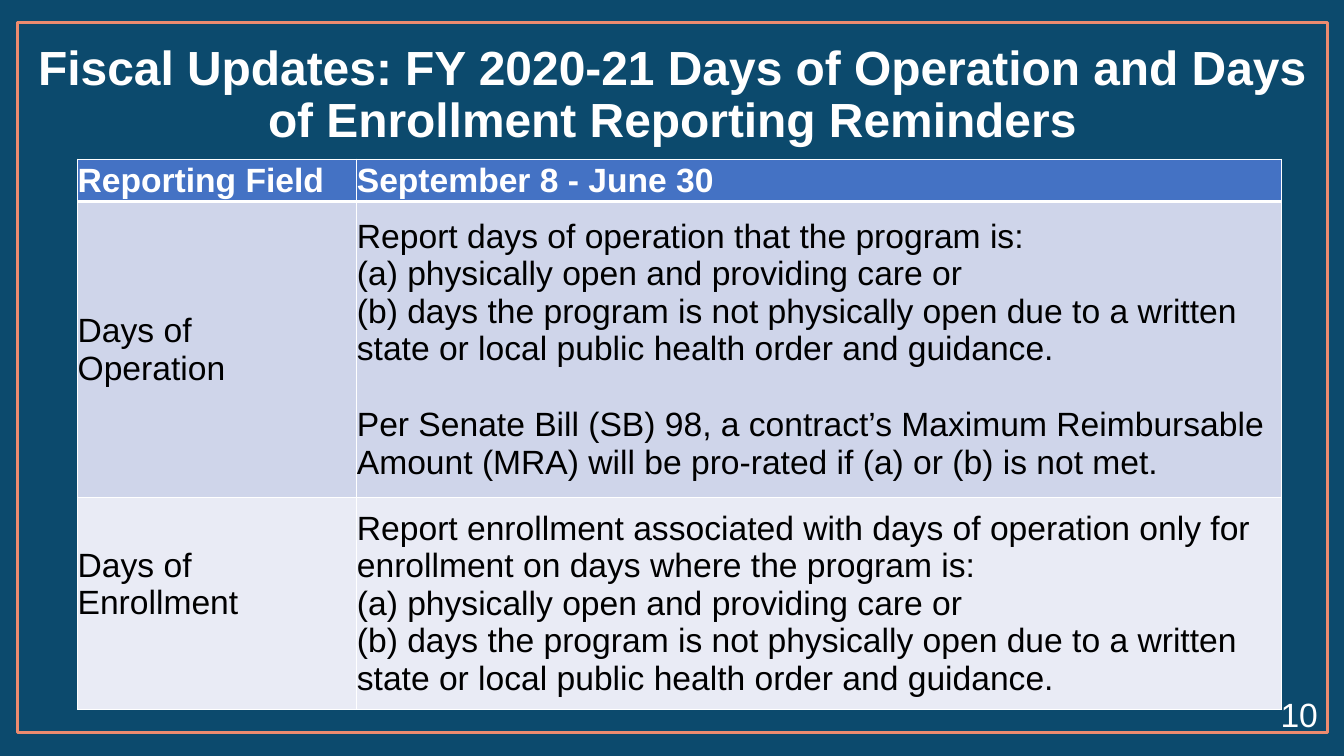
import pptx
import pptx.dml.color
import pptx.enum.shapes
import pptx.enum.text
import pptx.oxml
import pptx.oxml.ns
import pptx.util
from lxml import etree

Inches = pptx.util.Inches
Pt = pptx.util.Pt
ALIGN = pptx.enum.text.PP_ALIGN
MIDDLE = pptx.enum.text.MSO_ANCHOR.MIDDLE

TITLE = "Fiscal Updates: FY 2020-21 Days of Operation and Days of Enrollment Reporting Reminders"
PAGE_NUMBER = "10"
CARE_OPEN = "(a) physically open and providing care or"
CARE_CLOSED = ("(b) days the program is not physically open due to a written "
               "state or local public health order and guidance.")
ROWS = [
    ("Reporting Field", ["September 8 - June 30"]),
    ("Days of Operation", [
        "Report days of operation that the program is:",
        CARE_OPEN,
        CARE_CLOSED,
        "Per Senate Bill (SB) 98, a contract’s Maximum Reimbursable Amount (MRA) "
        "will be pro-rated if (a) or (b) is not met.",
    ]),
    ("Days of Enrollment", [
        "Report enrollment associated with days of operation only for "
        "enrollment on days where the program is:",
        CARE_OPEN,
        CARE_CLOSED,
    ]),
]
ROW_FILLS = ["4472C4", "CFD5EA", "E9EBF5"]
ROW_HEIGHTS = [0.42, 2.94, 2.1]
COLUMN_WIDTHS = [2.77, 9.17]
WHITE, BLACK = "FFFFFF", "000000"
BODY_SIZE = 24
LINE_HEIGHT = BODY_SIZE * 1.15


def color(value):
    return pptx.dml.color.RGBColor.from_string(value)


def write(frame, lines, size, ink, bold=False, align=ALIGN.LEFT):
    frame.text = "\n".join(lines)
    frame.word_wrap = True
    for para in frame.paragraphs:
        para.alignment = align
        for span in para.runs:
            span.font.name = "Arial"
            span.font.size = Pt(size)
            span.font.bold = bold
            span.font.color.rgb = color(ink)


def add_text(page, area, text, size, bold, align):
    box = page.shapes.add_textbox(*map(Inches, area))
    write(box.text_frame, [text], size, WHITE, bold, align)
    box.text_frame.vertical_anchor = MIDDLE
    return box.text_frame.paragraphs[0]


def set_borders(cell, widths):
    properties = cell._tc.get_or_add_tcPr()
    for index, (side, width) in enumerate(widths.items()):
        line = etree.Element(pptx.oxml.ns.qn(f"a:ln{side}"), w=str(Pt(width)))
        fill = etree.SubElement(line, pptx.oxml.ns.qn("a:solidFill"))
        etree.SubElement(fill, pptx.oxml.ns.qn("a:srgbClr"), val=WHITE)
        properties.insert(index, line)


def add_reporting_table(page):
    frame = page.shapes.add_table(
        len(ROWS), len(COLUMN_WIDTHS), Inches(0.77), Inches(1.58),
        Inches(sum(COLUMN_WIDTHS)), Inches(sum(ROW_HEIGHTS)))
    table = frame.table
    for column, width in zip(table.columns, COLUMN_WIDTHS):
        column.width = Inches(width)
    for row, height in zip(table.rows, ROW_HEIGHTS):
        row.height = Inches(height)
    for row, (label, details) in enumerate(ROWS):
        header = row == 0
        for column, lines in enumerate([[label], details]):
            cell = table.cell(row, column)
            cell.margin_left = cell.margin_right = 0
            cell.margin_top = cell.margin_bottom = 0
            cell.vertical_anchor = MIDDLE
            cell.fill.solid()
            cell.fill.fore_color.rgb = color(ROW_FILLS[row])
            write(cell.text_frame, lines, BODY_SIZE, WHITE if header else BLACK, header)
            set_borders(cell, {"L": 1, "R": 1, "T": 3 if row == 1 else 1,
                               "B": 3 if header else 1})
        if not header:
            table.cell(row, 0).margin_right = Inches(0.3)
    table.cell(1, 1).text_frame.paragraphs[-1].space_before = Pt(LINE_HEIGHT)
    table.cell(2, 0).margin_bottom = Pt(LINE_HEIGHT)


def main():
    deck = pptx.Presentation()
    deck.slide_width, deck.slide_height = Inches(13.33), Inches(7.5)
    page = deck.slides.add_slide(deck.slide_layouts[6])
    page.background.fill.solid()
    page.background.fill.fore_color.rgb = color("0C4A6D")

    border = page.shapes.add_shape(
        pptx.enum.shapes.MSO_SHAPE.RECTANGLE, *map(Inches, (0.17, 0.22, 13, 7.05)))
    border.shadow.inherit = False
    border.fill.background()
    border.line.color.rgb = color("ED8B6F")
    border.line.width = Pt(2)

    title = add_text(page, (0.17, 0.5, 13, 0.91), TITLE, 34.2, True, ALIGN.CENTER)
    title.line_spacing = 0.9
    add_reporting_table(page)
    add_text(page, (10.17, 6.88, 3, 0.4), PAGE_NUMBER, BODY_SIZE, False, ALIGN.RIGHT)
    deck.save("out.pptx")


if __name__ == "__main__":
    main()
